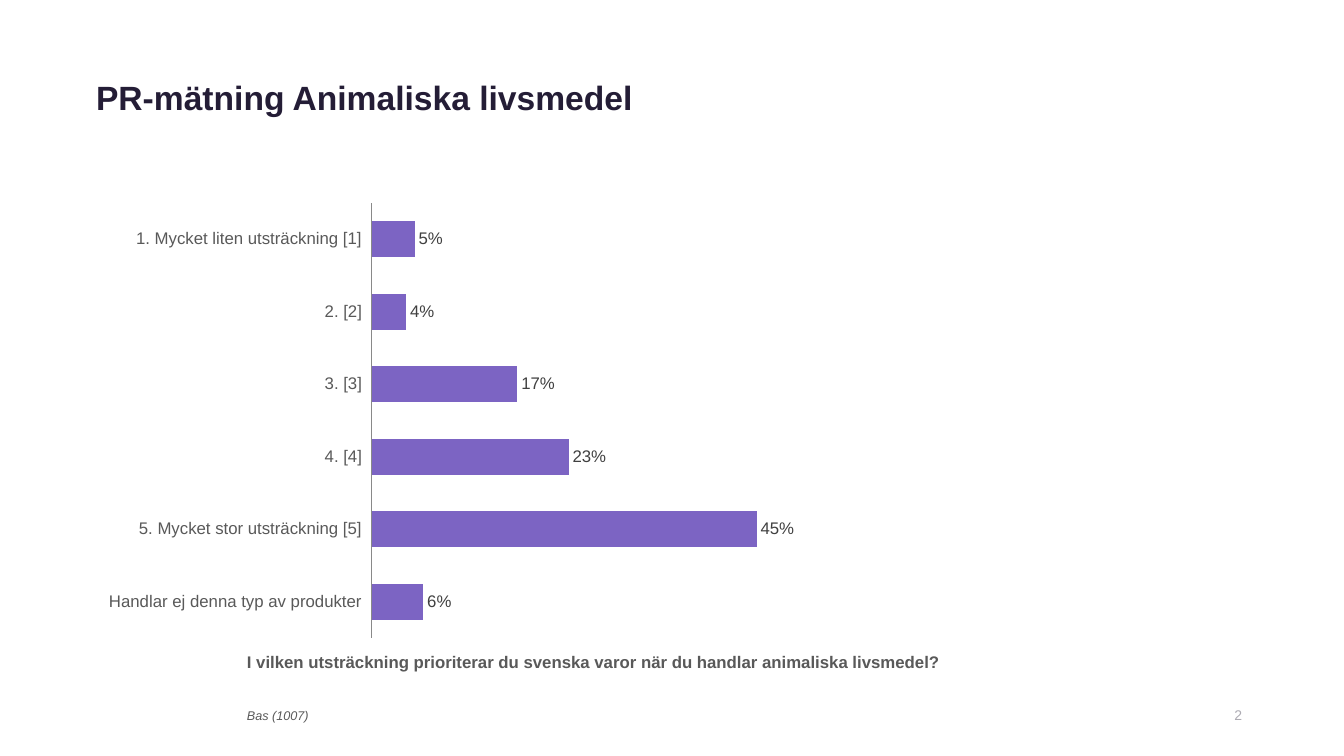
from pptx import Presentation
from pptx.chart.data import CategoryChartData
from pptx.dml.color import RGBColor
from pptx.enum.chart import XL_CHART_TYPE, XL_LABEL_POSITION, XL_TICK_LABEL_POSITION, XL_TICK_MARK
from pptx.enum.text import MSO_ANCHOR, PP_ALIGN
from pptx.oxml import parse_xml
from pptx.oxml.ns import nsdecls

INK = RGBColor(0x24, 0x1D, 0x36)
GREY = RGBColor(0x59, 0x59, 0x59)
DARK = RGBColor(0x40, 0x40, 0x40)
PALE = RGBColor(0xAD, 0xAB, 0xB3)
LINE = RGBColor(0x89, 0x89, 0x89)
PURPLE = RGBColor(0x7C, 0x64, 0xC3)

# Content; boxes are left, top, width, height in px
SIZE = (1344, 756)
TITLE = ("PR-mätning Animaliska livsmedel", (86, 72, 1172, 50),
         dict(size=24, bold=True, color=INK), PP_ALIGN.LEFT, MSO_ANCHOR.MIDDLE)
NOTES = [
    ("I vilken utsträckning prioriterar du svenska varor när du handlar animaliska livsmedel?",
     (237, 647, 940, 47), dict(size=12, bold=True, color=GREY), PP_ALIGN.LEFT, MSO_ANCHOR.TOP),
    ("Bas (1007)", (237, 703, 940, 27),
     dict(size=9, italic=True, color=GREY), PP_ALIGN.LEFT, MSO_ANCHOR.TOP),
    ("2", (1187, 701, 65, 27), dict(size=10, color=PALE), PP_ALIGN.RIGHT, MSO_ANCHOR.MIDDLE),
]
ANSWERS = {
    "1. Mycket liten utsträckning [1]": 0.05,
    "2. [2]": 0.04,
    "3. [3]": 0.17,
    "4. [4]": 0.23,
    "5. Mycket stor utsträckning [5]": 0.45,
    "Handlar ej denna typ av produkter": 0.06,
}
CHART = (86, 195, 1172, 453)
PLOT = (372, 203, 855, 435)


def emu(*px):
    return [round(n * 914400 / 100.8) for n in px]


def style(font, size, color, **rest):
    font.color.rgb = color
    for key, val in dict(rest, size=size * 12700, name="Arial").items():
        setattr(font, key, val)


def write(shape, text, box, look, align, anchor):
    for key, val in zip(("left", "top", "width", "height"), emu(*box)):
        setattr(shape, key, val)
    frame = shape.text_frame
    frame.word_wrap = True
    frame.vertical_anchor = anchor
    frame.text = text
    line = frame.paragraphs[0]
    line.alignment = align
    style(line.runs[0].font, **look)


prs = Presentation()
prs.slide_width, prs.slide_height = emu(*SIZE)
slide = prs.slides.add_slide(prs.slide_layouts[5])

# Title, question, base and page number
write(slide.shapes.title, *TITLE)
for note in NOTES:
    write(slide.shapes.add_textbox(0, 0, 0, 0), *note)

# Bar chart
data = CategoryChartData(number_format="0%")
data.categories = ANSWERS
data.add_series("Series 1", ANSWERS.values())
chart = slide.shapes.add_chart(XL_CHART_TYPE.BAR_CLUSTERED, *emu(*CHART), data).chart
chart.has_legend = chart.has_title = False
style(chart.font, 18, RGBColor(0, 0, 0))

cats = chart.category_axis
cats.reverse_order = True
cats.major_tick_mark = cats.minor_tick_mark = XL_TICK_MARK.NONE
cats.tick_label_position = XL_TICK_LABEL_POSITION.LOW
cats.has_major_gridlines = False
cats.format.line.color.rgb = LINE
style(cats.tick_labels.font, 12, GREY)

scale = chart.value_axis
for key, val in dict(visible=False, has_major_gridlines=False, minimum_scale=0,
                     maximum_scale=1, major_unit=0.1).items():
    setattr(scale, key, val)

bars = chart.plots[0]
bars.gap_width, bars.overlap, bars.vary_by_categories = 100, -10, False
fill = bars.series[0].format.fill
fill.solid()
fill.fore_color.rgb = PURPLE
labels = bars.series[0].data_labels
for key, val in dict(show_value=True, position=XL_LABEL_POSITION.OUTSIDE_END,
                     number_format="0%", number_format_is_linked=False).items():
    setattr(labels, key, val)
style(labels.font, 12, DARK)

# Fixed plot area, as shares of the chart box
left, top, wide, high = CHART
parts = dict(x=(PLOT[0] - left) / wide, y=(PLOT[1] - top) / high,
             w=PLOT[2] / wide, h=PLOT[3] / high)
area = chart._chartSpace.chart.plotArea
for old in area.findall("{*}layout"):
    area.remove(old)
area.insert(0, parse_xml(
    f'<c:layout {nsdecls("c")}><c:manualLayout><c:layoutTarget val="inner"/>'
    '<c:xMode val="edge"/><c:yMode val="edge"/>'
    + "".join(f'<c:{key} val="{val:.4f}"/>' for key, val in parts.items())
    + "</c:manualLayout></c:layout>"))

prs.save("out.pptx")
